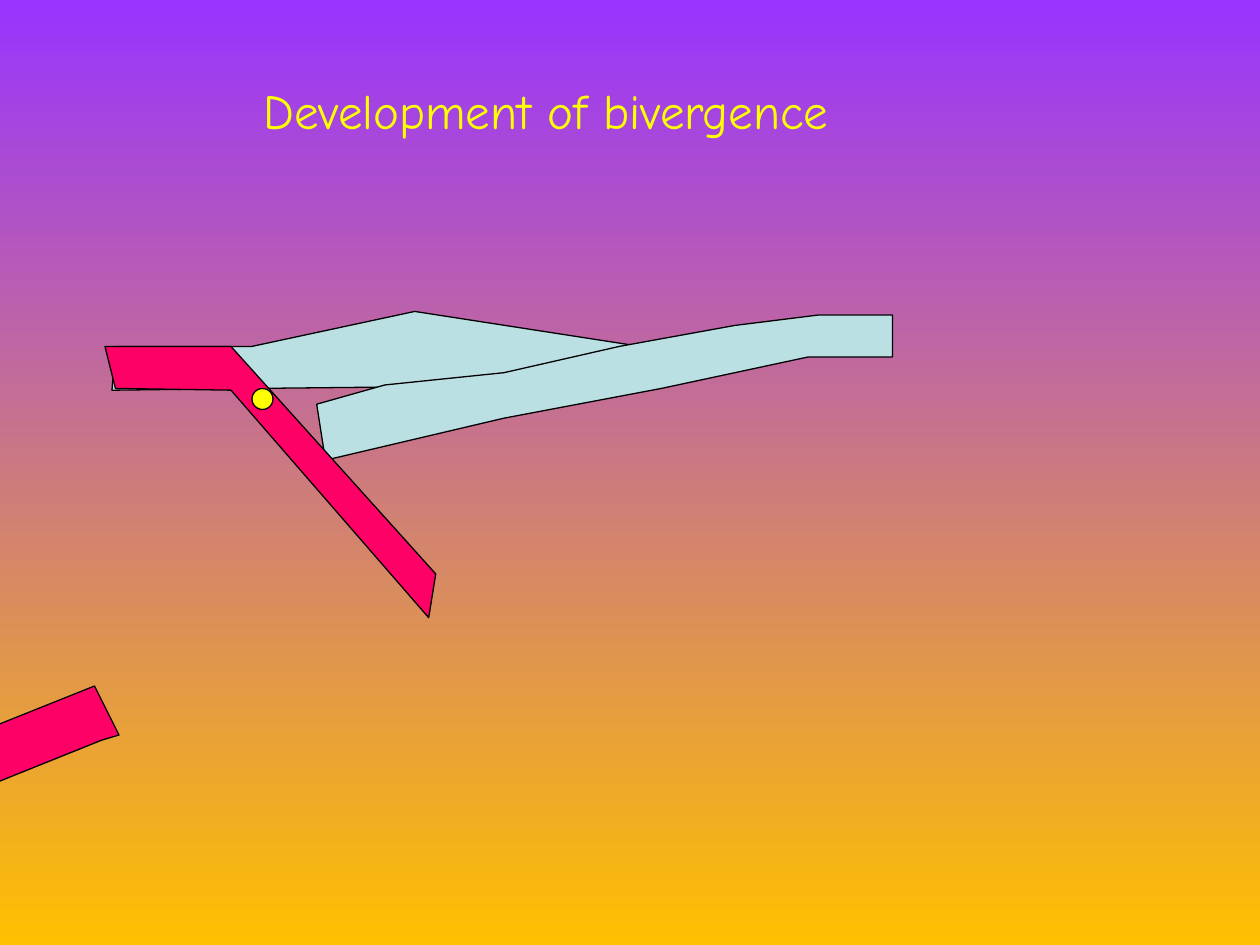
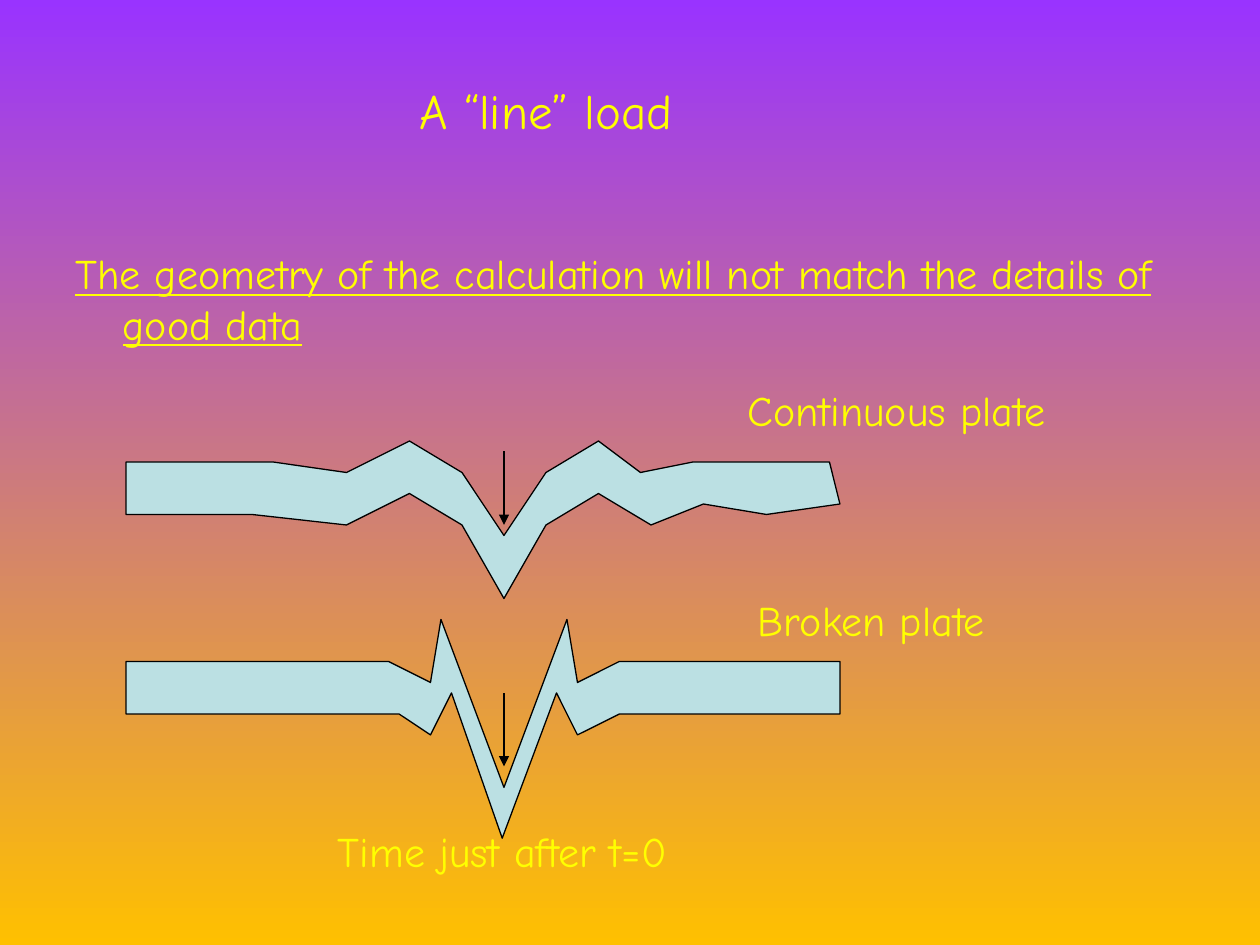
"""Two slides on plate bending: bivergence and a line load."""
from lxml.etree import SubElement
from pptx import Presentation
from pptx.dml.color import RGBColor
from pptx.enum.shapes import MSO_CONNECTOR, MSO_SHAPE
from pptx.enum.text import MSO_ANCHOR, PP_ALIGN
from pptx.oxml.ns import qn
from pptx.util import Pt

FONT = "Comic Neue"
INK = {"top": "9933FF", "base": "FFC000", "text": "FFFF00",
       "plate": "BBE0E3", "slab": "FF0066", "edge": "000000"}
TITLE = (36, 24, 552, 78)
BODY = (36, 138, 660, 338)
HANG = 27

SLIDES = [
    {
        "title": "Development of bivergence",
        "forms": [
            ("slab", [(54, 392), (-66, 440), (-54, 468), (58, 423), (68, 420)]),
            ("plate", [(366, 198), (237, 178), (144, 198), (66, 198),
                       (64, 223), (146, 222), (242, 221), (353, 204)]),
            ("plate", [(510, 180), (468, 180), (420, 186), (354, 198),
                       (288, 213), (220, 220), (181, 231), (186, 263),
                       (288, 239), (378, 222), (462, 204), (510, 204)]),
            ("slab", [(66, 198), (132, 198), (249, 328), (245, 353),
                      (132, 223), (66, 222), (60, 198)]),
        ],
        "dots": [(144, 222, 12)],
    },
    {
        "title": "A “line” load",
        "body": "The geometry of the calculation will not match the details of good data",
        "labels": [
            ("Time just after t=0", (186, 468, 264, 36)),
            ("Continuous plate", (420, 216, 264, 36)),
            ("Broken plate", (426, 336, 216, 36)),
        ],
        "loads": [(288, 258, 300), (288, 396, 438)],
        "forms": [
            ("plate", [(72, 264), (72, 294), (144, 294), (198, 300),
                       (234, 282), (264, 300), (288, 342), (312, 300),
                       (342, 282), (372, 300), (402, 288), (438, 294),
                       (480, 288), (474, 264), (396, 264), (366, 270),
                       (342, 252), (312, 270), (288, 306), (264, 270),
                       (234, 252), (198, 270), (156, 264)]),
            ("plate", [(72, 378), (222, 378), (246, 390), (252, 354),
                       (288, 450), (324, 354), (330, 390), (354, 378),
                       (480, 378), (480, 408), (354, 408), (330, 420),
                       (318, 396), (287, 479), (258, 396), (246, 420),
                       (228, 408), (72, 408)]),
        ],
    },
]


def tint(name):
    return RGBColor.from_string(INK[name])


def rule(line):
    line.color.rgb = tint("edge")
    line.width = Pt(0.75)


def paint(shape, name):
    shape.shadow.inherit = False
    shape.fill.solid()
    shape.fill.fore_color.rgb = tint(name)
    rule(shape.line)


def write(slide, text, box, size=24, under=None):
    frame = slide.shapes.add_textbox(*map(Pt, box)).text_frame
    frame.word_wrap = True
    para = frame.paragraphs[0]
    run = para.add_run()
    run.text = text
    font = run.font
    font.name, font.size, font.underline = FONT, Pt(size), under
    font.color.rgb = tint("text")
    return frame, para


def head(slide, text):
    frame, para = write(slide, text, TITLE, 28)
    frame.vertical_anchor = MSO_ANCHOR.MIDDLE
    para.alignment = PP_ALIGN.CENTER


def state(slide, text):
    para = write(slide, text, BODY, under=True)[1]
    props = para._p.get_or_add_pPr()
    props.set("marL", str(Pt(HANG)))
    props.set("indent", str(-Pt(HANG)))


def trace(slide, name, points):
    pen = slide.shapes.build_freeform(*points[0], scale=Pt(1))
    pen.add_line_segments(points[1:], close=True)
    paint(pen.convert_to_shape(), name)


def push(slide, x, top, end):
    arrow = slide.shapes.add_connector(
        MSO_CONNECTOR.STRAIGHT, Pt(x), Pt(top), Pt(x), Pt(end))
    rule(arrow.line)
    SubElement(arrow.line._get_or_add_ln(), qn("a:tailEnd"), type="triangle")
    SubElement(arrow._element.spPr, qn("a:effectLst"))


def shade(master):
    fill = master.background.fill
    fill.gradient()
    fill.gradient_angle = 270
    for stop, name in zip(fill.gradient_stops, ("top", "base")):
        stop.color.rgb = tint(name)


def main():
    deck = Presentation()
    deck.slide_width, deck.slide_height = Pt(720), Pt(540)
    shade(deck.slide_master)
    for part in SLIDES:
        slide = deck.slides.add_slide(deck.slide_layouts[6])
        head(slide, part["title"])
        if "body" in part:
            state(slide, part["body"])
        for text, box in part.get("labels", []):
            write(slide, text, box)
        for load in part.get("loads", []):
            push(slide, *load)
        for name, points in part["forms"]:
            trace(slide, name, points)
        for x, y, size in part.get("dots", []):
            dot = slide.shapes.add_shape(
                MSO_SHAPE.OVAL, Pt(x), Pt(y), Pt(size), Pt(size))
            paint(dot, "text")
    deck.save("out.pptx")


if __name__ == "__main__":
    main()
